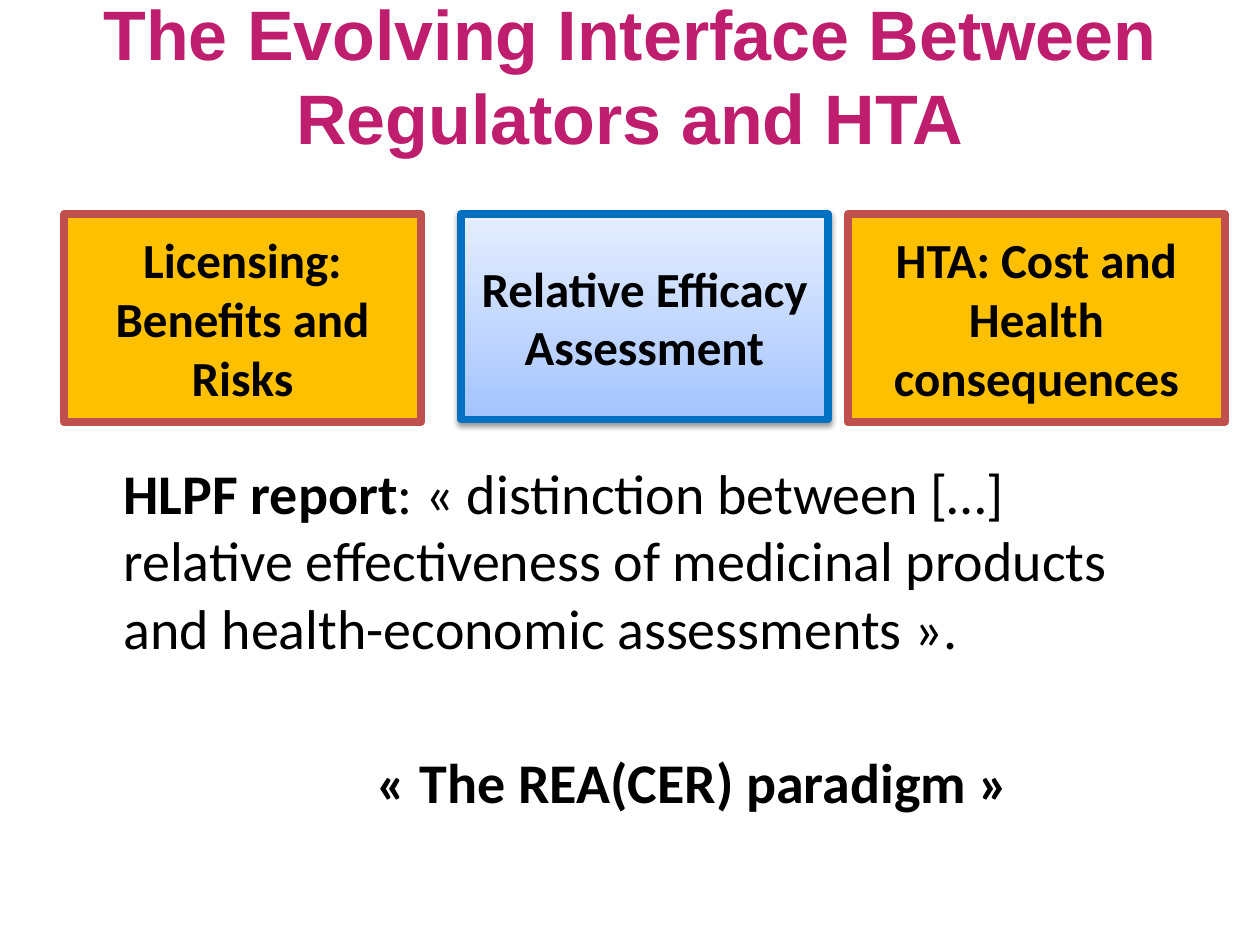
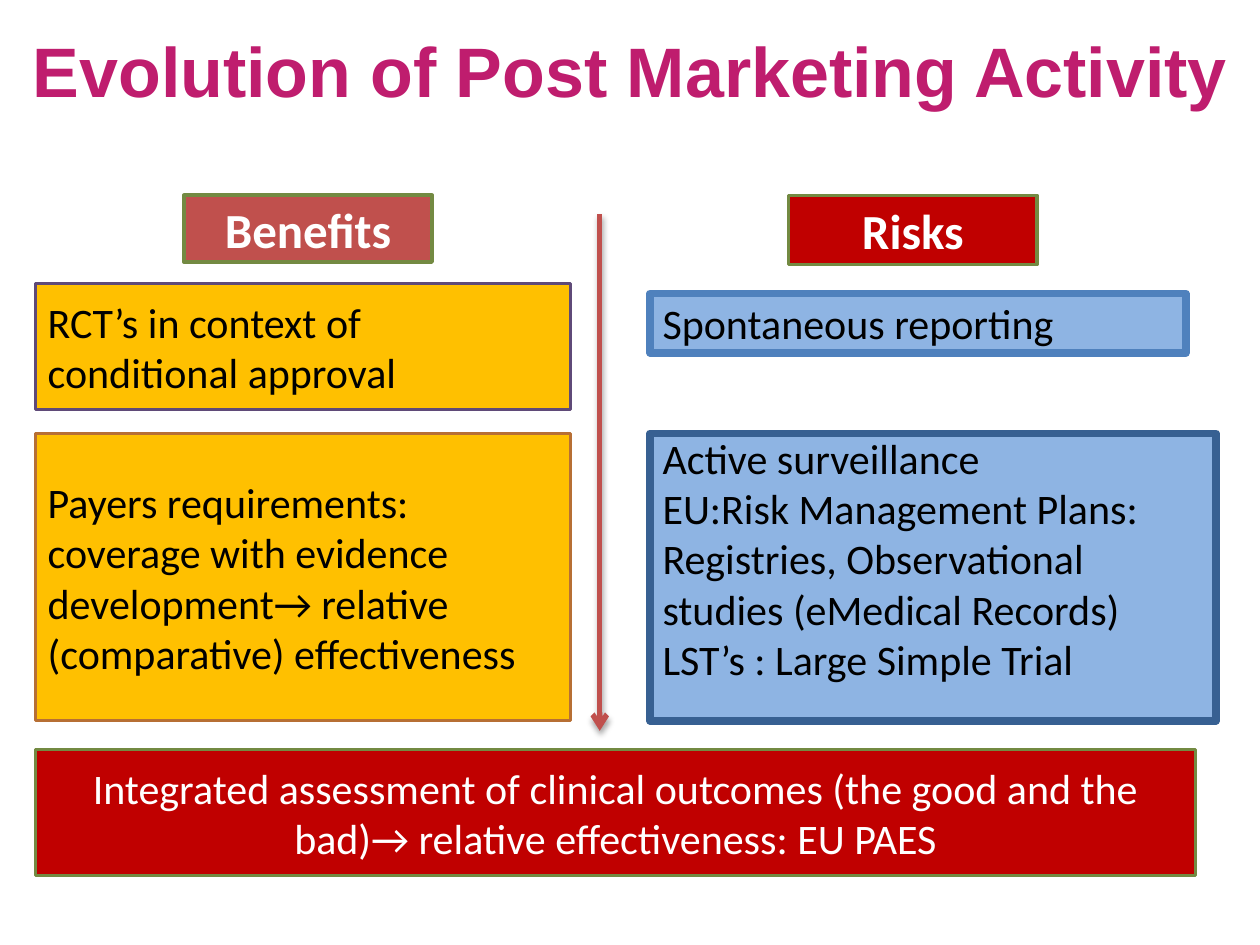
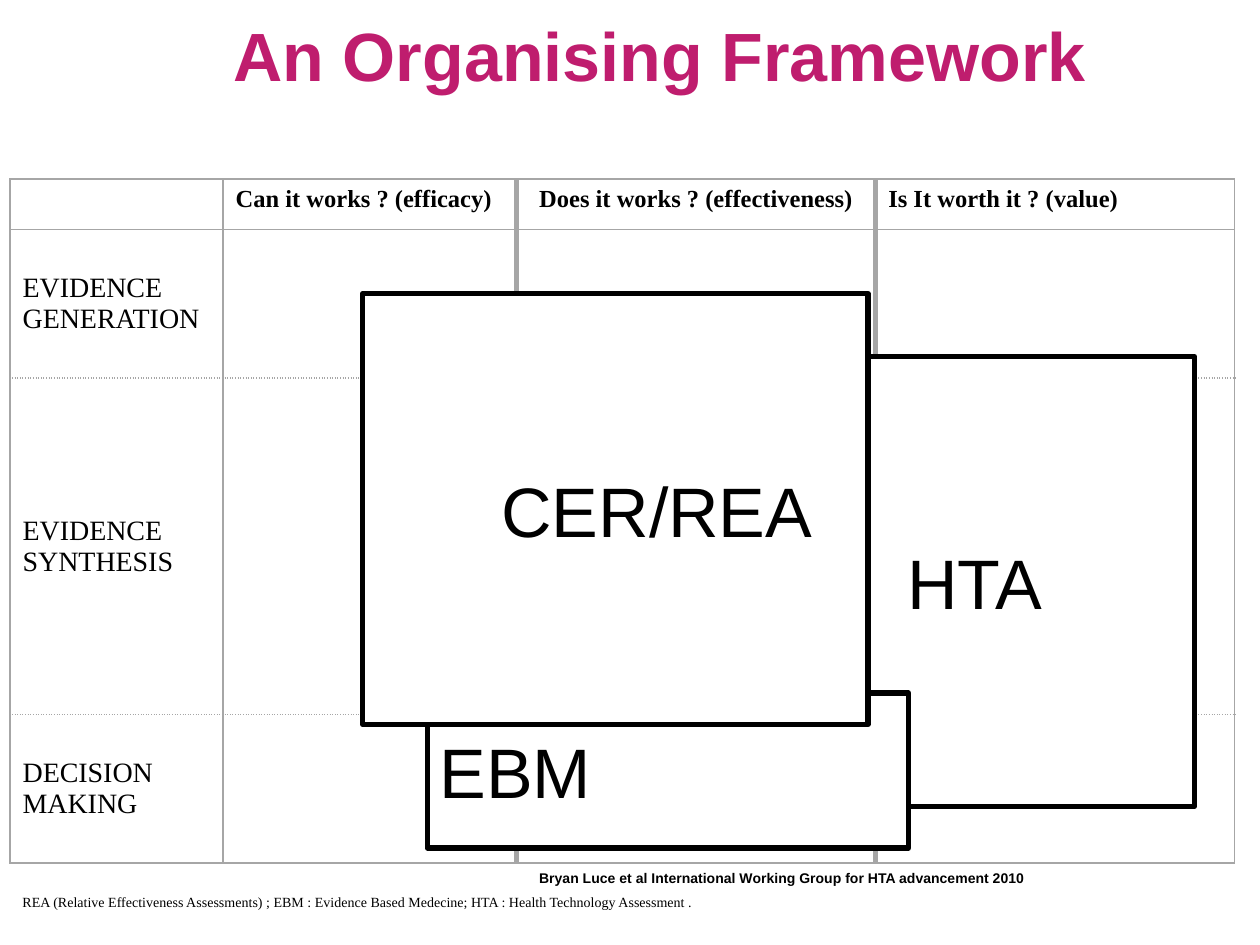
from dataclasses import dataclass

from lxml.etree import SubElement
from pptx import Presentation
from pptx.dml.color import RGBColor
from pptx.enum.shapes import MSO_CONNECTOR, MSO_SHAPE
from pptx.enum.text import MSO_ANCHOR, MSO_AUTO_SIZE, PP_ALIGN
from pptx.oxml.ns import qn
from pptx.util import Inches, Pt


@dataclass(frozen=True)
class Theme:
    """Colours, fonts and type sizes of the deck."""

    pink: str = "BF1D6E"
    black: str = "000000"
    white: str = "FFFFFF"
    gold: str = "FFC000"
    brick: str = "C0504D"
    red: str = "C00000"
    olive: str = "738A42"
    plum: str = "5F4A78"
    rust: str = "B76F34"
    sky: str = "8EB4E3"
    blue: str = "4F81BD"
    navy: str = "376092"
    azure: str = "0070C0"
    pale: tuple = ("A4C4FF", "E6EEFF")
    grey: str = "A6A6A6"
    sans: str = "Arial"
    body: str = "Calibri"
    serif: str = "Times New Roman"
    huge: int = 40
    large: int = 32
    head: int = 28
    text: int = 24
    row: int = 16
    col: int = 14
    note: int = 8


T = Theme()


def rgb(code):
    """Turn a hex code into a colour."""
    return RGBColor.from_string(code)


def style(para, size, face=T.body, color=T.black, bold=False, align=PP_ALIGN.LEFT):
    """Set the font and alignment of a paragraph."""
    para.alignment = align
    font = para.font
    font.name, font.size, font.bold = face, Pt(size), bold
    font.color.rgb = rgb(color)


def place(shape, area):
    """Move a shape to left, top, width, height in inches."""
    shape.left, shape.top, shape.width, shape.height = map(Inches, area)


def shade(shape, alpha=0, dist=0):
    """Give a shape a soft downward shadow, or none at all."""
    effect = SubElement(shape._element.spPr, qn("a:effectLst"))
    if alpha:
        outer = SubElement(effect, qn("a:outerShdw"), blurRad=str(Pt(3.1)),
                           dist=str(Pt(dist)), dir="5400000", rotWithShape="0")
        tint = SubElement(outer, qn("a:srgbClr"), val=T.black)
        SubElement(tint, qn("a:alpha"), val=str(alpha * 1000))


def title(slide, text, area, size=T.huge, space=None):
    """Fill and format the title placeholder."""
    shape = slide.shapes.title
    place(shape, area)
    frame = shape.text_frame
    frame.text = text
    frame.auto_size = MSO_AUTO_SIZE.NONE
    frame.vertical_anchor = MSO_ANCHOR.MIDDLE
    para = frame.paragraphs[0]
    style(para, size, T.sans, T.pink, True, PP_ALIGN.CENTER)
    if space:
        para.line_spacing = space


def box(slide, text, area, fill, edge, width, **look):
    """Draw a framed rectangle with text and return it."""
    shape = slide.shapes.add_shape(MSO_SHAPE.RECTANGLE, *map(Inches, area))
    if isinstance(fill, tuple):
        shape.fill.gradient()
        shape.fill.gradient_angle = 90
        for stop, code in zip(shape.fill.gradient_stops, fill):
            stop.color.rgb = rgb(code)
    else:
        shape.fill.solid()
        shape.fill.fore_color.rgb = rgb(fill)
    shape.line.color.rgb = rgb(edge)
    shape.line.width = Pt(width)
    frame = shape.text_frame
    frame.text = text
    frame.word_wrap = True
    frame.vertical_anchor = MSO_ANCHOR.MIDDLE
    for para in frame.paragraphs:
        style(para, **look)
    return shape


def note(slide, text, area, **look):
    """Add a small line of text."""
    frame = slide.shapes.add_textbox(*map(Inches, area)).text_frame
    frame.text = text
    frame.word_wrap = True
    style(frame.paragraphs[0], T.note, **look)


def quote(para, runs, left):
    """Write plain and bold runs as an unbulleted, indented paragraph."""
    props = para._p.get_or_add_pPr()
    props.set("marL", str(Inches(left)))
    props.set("indent", "0")
    SubElement(props, qn("a:buNone"))
    style(para, T.large)
    for text, bold in runs:
        run = para.add_run()
        run.text = text
        run.font.bold = bold


def arrow(slide, x, top, end):
    """Draw the downward time arrow."""
    line = slide.shapes.add_connector(
        MSO_CONNECTOR.STRAIGHT, *map(Inches, (x, top, x, end)))
    line.line.color.rgb = rgb(T.brick)
    line.line.width = Pt(3)
    SubElement(line.line._get_or_add_ln(), qn("a:tailEnd"), type="arrow")
    shade(line, 35, 1.8)


def border(cell, side, width, dash):
    """Draw one border of a cell."""
    line = SubElement(cell._tc.get_or_add_tcPr(), qn("a:ln" + side), w=str(Pt(width)))
    fill = SubElement(line, qn("a:solidFill"))
    SubElement(fill, qn("a:srgbClr"), val=T.grey)
    SubElement(line, qn("a:prstDash"), val=dash)


def grid(slide, rows, area, wide, high):
    """Add the framework table with thick columns and dotted rows."""
    frame = slide.shapes.add_table(len(high), len(wide), *map(Inches, area))
    table = frame.table
    table.first_row = table.horz_banding = False
    for col, width in zip(table.columns, wide):
        col.width = Inches(width)
    for row, height in zip(table.rows, high):
        row.height = Inches(height)
    for r, row in enumerate(rows):
        for c, text in enumerate(row):
            cell = table.cell(r, c)
            cell.text = text
            cell.vertical_anchor = MSO_ANCHOR.MIDDLE if r else MSO_ANCHOR.TOP
            for para in cell.text_frame.paragraphs:
                style(para, T.row if r else T.col, T.serif, bold=r == 0,
                      align=PP_ALIGN.CENTER if (r, c) == (0, 2) else PP_ALIGN.LEFT)
            for side, edge in (("L", c), ("R", c + 1)):
                border(cell, side, 3 if edge in (2, 3) else 1, "solid")
            for side, edge in (("T", r), ("B", r + 1)):
                border(cell, side, 1, "sysDot" if edge in (2, 3) else "solid")
            cell.fill.background()


def interface(deck):
    """Build the slide on regulators and HTA."""
    slide = deck.slides.add_slide(deck.slide_layouts[1])
    title(slide, "The Evolving Interface Between Regulators and HTA",
          (0, -0.03, 10, 1.25))
    body = slide.placeholders[1]
    place(body, (0.5, 3.59, 9, 3.11))
    frame = body.text_frame
    frame.auto_size = MSO_AUTO_SIZE.NONE
    first = frame.paragraphs[0]
    quote(first, [
        ("HLPF report", True),
        (": «\u00a0distinction between […] relative effectiveness of medicinal "
         "products and health-economic assessments\u00a0».", False)], 0.38)
    first.space_before = Pt(0)
    last = frame.add_paragraph()
    quote(last, [("«\u00a0The REA(CER) paradigm\u00a0»", True)], 2.39)
    last.space_before = Pt(50)
    steps = [
        ("Licensing:\nBenefits and Risks", (0.51, 1.7, 2.83, 1.65), T.gold, T.brick),
        ("Relative Efficacy Assessment", (3.66, 1.7, 2.91, 1.63), T.pale, T.azure),
        ("HTA: Cost and Health consequences", (6.73, 1.7, 2.99, 1.65), T.gold, T.brick),
    ]
    for text, area, fill, edge in steps:
        shape = box(slide, text, area, fill, edge, 4.5,
                    size=T.head, bold=True, align=PP_ALIGN.CENTER)
        shade(shape, 38 if fill == T.pale else 0, 1.6)


def activity(deck):
    """Build the slide on post marketing activity."""
    slide = deck.slides.add_slide(deck.slide_layouts[5])
    title(slide, "Evolution of Post Marketing Activity", (0, -0.03, 10, 1.28), space=0.8)
    arrow(slide, 4.76, 1.7, 5.8)
    heads = [("Benefits", (1.46, 1.55, 1.97, 0.53), T.brick),
             ("Risks", (6.26, 1.55, 1.97, 0.55), T.red)]
    for text, area, fill in heads:
        shade(box(slide, text, area, fill, T.olive, 2, size=T.head,
                  color=T.white, bold=True, align=PP_ALIGN.CENTER))
    items = [
        ("RCT’s in context of conditional approval",
         (0.28, 2.25, 4.25, 1), T.gold, T.plum, 2),
        ("Spontaneous reporting", (5.16, 2.33, 4.25, 0.47), T.sky, T.blue, 4.5),
        ("Payers requirements:\ncoverage with evidence development→ relative "
         "(comparative) effectiveness", (0.28, 3.44, 4.25, 2.28), T.gold, T.rust, 2),
    ]
    for text, area, fill, edge, width in items:
        shade(box(slide, text, area, fill, edge, width, size=T.text))
    watch = box(slide, "Active surveillance\nEU:Risk Management Plans:\n"
                "Registries, Observational studies (eMedical Records)\n"
                "LST’s : Large Simple Trial",
                (5.16, 3.44, 4.49, 2.28), T.sky, T.navy, 4.5, size=T.text)
    watch.text_frame.margin_bottom = Inches(0.35)
    shade(watch)
    shade(box(slide, "Integrated assessment of clinical outcomes (the good and the bad)"
              "→ relative effectiveness: EU PAES", (0.28, 5.95, 9.21, 1), T.red,
              T.olive, 2, size=T.text, color=T.white, align=PP_ALIGN.CENTER))


def framework(deck):
    """Build the slide with the organising framework."""
    slide = deck.slides.add_slide(deck.slide_layouts[5])
    title(slide, "An Organising Framework", (1.14, 0.05, 8.19, 0.76), 39)
    rows = [
        ("", "Can it works ? (efficacy)", "Does it works ? (effectiveness)",
         "Is It worth it ? (value)"),
        ("EVIDENCE GENERATION", "", "", ""),
        ("EVIDENCE\nSYNTHESIS", "", "", ""),
        ("DECISION MAKING", "", "", ""),
    ]
    grid(slide, rows, (0.08, 1.42, 9.72, 5.43),
         (1.69, 2.33, 2.85, 2.85), (0.4, 1.18, 2.67, 1.18))
    fields = [("HTA", (6.1, 2.83, 3.38, 3.57), 1.1),
              ("EBM", (3.39, 5.5, 3.82, 1.23), 0.1),
              ("CER/REA", (2.88, 2.33, 4.01, 3.42), 1.1)]
    for text, area, left in fields:
        shape = box(slide, text, area, T.white, T.black, 3, size=T.huge, face=T.sans)
        shape.text_frame.margin_left = Inches(left)
        shade(shape)
    note(slide, "REA (Relative Effectiveness Assessments) ; EBM : Evidence Based "
         "Medecine; HTA : Health Technology Assessment .",
         (0.08, 7.04, 9.92, 0.21), face=T.serif)
    note(slide, "Bryan Luce et al International Working Group for HTA advancement 2010",
         (4.18, 6.85, 4.92, 0.23), face=T.sans, bold=True)


def main():
    """Build and save the deck."""
    deck = Presentation()
    deck.slide_width, deck.slide_height = Inches(10), Inches(7.5)
    interface(deck)
    activity(deck)
    framework(deck)
    deck.save("out.pptx")


if __name__ == "__main__":
    main()
